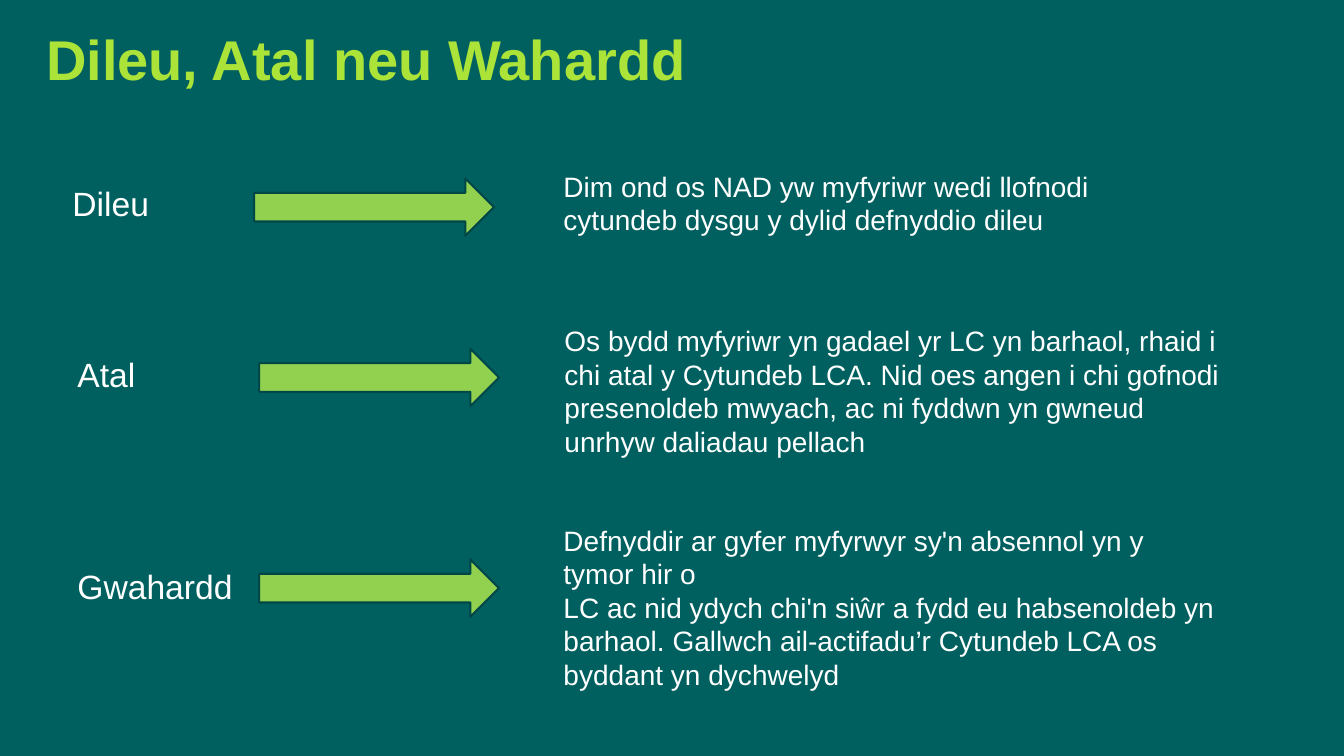
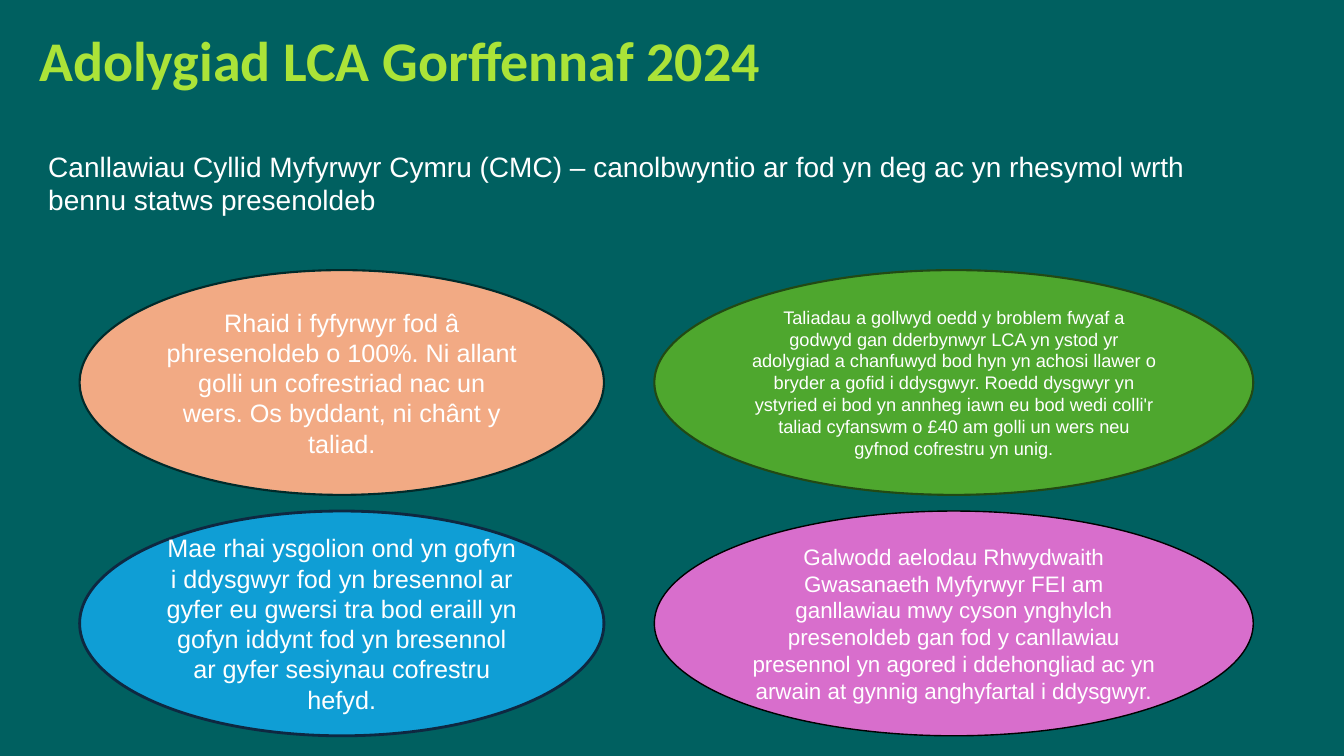
from pptx import Presentation
from pptx.dml.color import RGBColor
from pptx.enum.shapes import MSO_SHAPE
from pptx.enum.text import MSO_ANCHOR, PP_ALIGN
from pptx.util import Inches, Pt


def color(value):
    return RGBColor.from_string(value)


class Deck:
    BACKGROUND = "006060"
    TITLE = "ABE338"
    TEXT = "FFFFFF"
    ARROW = "92D050"
    ARROW_LINE = "004747"
    FONT = "Arial"

    def __init__(self):
        self.presentation = Presentation()
        self.presentation.slide_width = Inches(13.33)
        self.presentation.slide_height = Inches(7.5)
        fill = self.presentation.slide_master.background.fill
        fill.solid()
        fill.fore_color.rgb = color(self.BACKGROUND)
        self.slide = None

    def add_slide(self):
        self.slide = self.presentation.slides.add_slide(self.presentation.slide_layouts[6])

    def set_text(self, shape, text, size, font=FONT, text_color=TEXT, bold=False,
                 align=PP_ALIGN.LEFT, anchor=MSO_ANCHOR.TOP, line_spacing=1.0):
        frame = shape.text_frame
        frame.word_wrap = True
        frame.vertical_anchor = anchor
        frame.text = text
        for paragraph in frame.paragraphs:
            paragraph.alignment = align
            paragraph.line_spacing = line_spacing
            for run in paragraph.runs:
                run.font.name = font
                run.font.size = Pt(size)
                run.font.bold = bold
                run.font.color.rgb = color(text_color)

    def text(self, left, top, width, height, text, size, **style):
        box = self.slide.shapes.add_textbox(
            Inches(left), Inches(top), Inches(width), Inches(height))
        self.set_text(box, text, size, **style)

    def title(self, left, top, width, height, text, **style):
        self.text(left, top, width, height, text, 40, text_color=self.TITLE,
                  bold=True, anchor=MSO_ANCHOR.MIDDLE, **style)

    def shape(self, kind, left, top, width, height, fill, line, line_width=1.5):
        shape = self.slide.shapes.add_shape(
            kind, Inches(left), Inches(top), Inches(width), Inches(height))
        shape.shadow.inherit = False
        shape.fill.solid()
        shape.fill.fore_color.rgb = color(fill)
        shape.line.color.rgb = color(line)
        shape.line.width = Pt(line_width)
        return shape

    def arrow(self, left, top):
        self.shape(MSO_SHAPE.RIGHT_ARROW, left, top, 2.38, 0.57, self.ARROW, self.ARROW_LINE)

    def ellipse(self, left, top, width, height, text, size, fill, line, line_width):
        shape = self.shape(MSO_SHAPE.OVAL, left, top, width, height, fill, line, line_width)
        self.set_text(shape, text, size, align=PP_ALIGN.CENTER, anchor=MSO_ANCHOR.MIDDLE)


def add_actions(deck):
    deck.add_slide()
    deck.title(0.36, 0.26, 7.68, 0.71, "Dileu, Atal neu Wahardd", line_spacing=0.9)
    rows = [
        ("Dileu", 0.62, 1.77, 2.52, 1.77, (5.49, 1.63, 6.56, 0.77),
         "Dim ond os NAD yw myfyriwr wedi llofnodi cytundeb dysgu y dylid defnyddio dileu"),
        ("Atal", 0.67, 3.46, 2.57, 3.46, (5.5, 3.16, 6.91, 1.45),
         "Os bydd myfyriwr yn gadael yr LC yn barhaol, rhaid i chi atal y Cytundeb LCA. "
         "Nid oes angen i chi gofnodi presenoldeb mwyach, ac ni fyddwn yn gwneud unrhyw "
         "daliadau pellach"),
        ("Gwahardd", 0.67, 5.57, 2.57, 5.55, (5.49, 5.14, 6.68, 1.78),
         "Defnyddir ar gyfer myfyrwyr sy'n absennol yn y tymor hir o\n"
         "LC ac nid ydych chi'n siŵr a fydd eu habsenoldeb yn barhaol. Gallwch "
         "ail-actifadu’r Cytundeb LCA os byddant yn dychwelyd"),
    ]
    for label, label_left, label_top, arrow_left, arrow_top, box, explanation in rows:
        deck.text(label_left, label_top, 1.86, 0.5, label, 24)
        deck.arrow(arrow_left, arrow_top)
        deck.text(*box, explanation, 20)


def add_review(deck):
    deck.add_slide()
    deck.title(0.29, 0.2, 8.03, 0.77, "Adolygiad LCA Gorffennaf 2024", font="Calibri")
    deck.text(0.38, 1.43, 11.71, 0.77,
              "Canllawiau Cyllid Myfyrwyr Cymru (CMC) – canolbwyntio ar fod yn deg ac yn "
              "rhesymol wrth bennu statws presenoldeb", 20)
    columns = [(0.79, 5.2), (6.49, 5.94)]
    findings = [
        ("Rhaid i fyfyrwyr fod â phresenoldeb o 100%. Ni allant golli un cofrestriad nac "
         "un wers. Os byddant, ni chânt y taliad.", 18, "F2AA84", "002A2A", 1.5),
        ("Taliadau a gollwyd oedd y broblem fwyaf a godwyd gan dderbynwyr LCA yn ystod yr "
         "adolygiad a chanfuwyd bod hyn yn achosi llawer o bryder a gofid i ddysgwyr. Roedd "
         "dysgwyr yn ystyried ei bod yn annheg iawn eu bod wedi colli'r taliad cyfanswm o "
         "£40 am golli un wers neu gyfnod cofrestru yn unig.", 13, "4EA72E", "224914", 1.5),
        ("Mae rhai ysgolion ond yn gofyn i ddysgwyr fod yn bresennol ar gyfer eu gwersi tra "
         "bod eraill yn gofyn iddynt fod yn bresennol ar gyfer sesiynau cofrestru hefyd.",
         18, "0F9ED5", "0E2841", 2),
        ("Galwodd aelodau Rhwydwaith Gwasanaeth Myfyrwyr FEI am ganllawiau mwy cyson "
         "ynghylch presenoldeb gan fod y canllawiau presennol yn agored i ddehongliad ac yn "
         "arwain at gynnig anghyfartal i ddysgwyr.", 16, "D86ECC", "000000", 1),
    ]
    for index, finding in enumerate(findings):
        row, column = divmod(index, 2)
        left, width = columns[column]
        deck.ellipse(left, 2.68 + row * 2.39, width, 2.23, *finding)


def main():
    deck = Deck()
    add_actions(deck)
    add_review(deck)
    deck.presentation.save("out.pptx")


if __name__ == "__main__":
    main()
